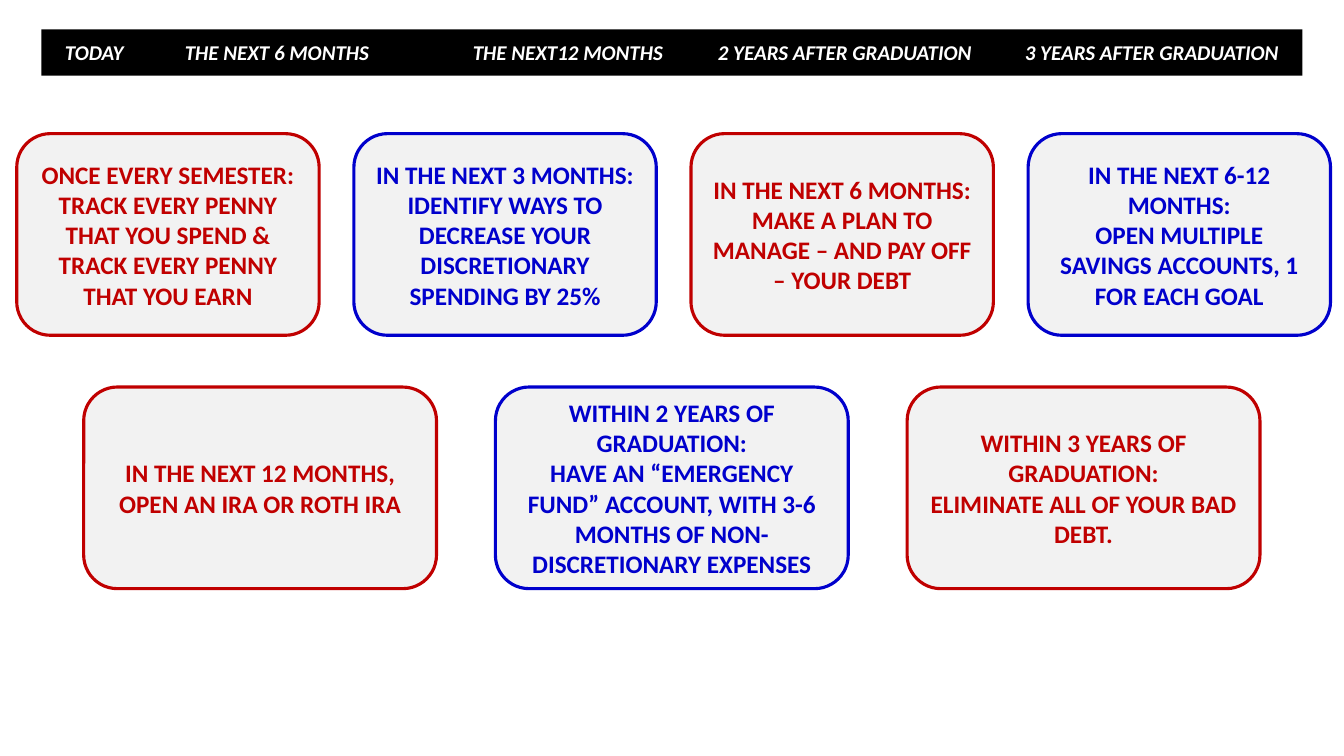
from lxml import etree
from pptx import Presentation
from pptx import util as u
from pptx.dml.color import RGBColor
from pptx.enum import shapes, text
from pptx.oxml import ns

Pt = u.Pt
FONT = "Calibri"
COLORS = {"black": "000000", "white": "FFFFFF", "card": "F2F2F2",
          "red": "C00000", "blue": "0000CC"}

# Label and its start, measured from the first label
PERIODS = [("TODAY", 0), ("THE NEXT 6 MONTHS", 85.7), ("THE NEXT12 MONTHS", 291.4),
           ("2 YEARS AFTER GRADUATION", 466.4), ("3 YEARS AFTER GRADUATION", 685.7)]

NEAR_GOALS = [
    ("red", ["ONCE EVERY SEMESTER:",
             "TRACK EVERY PENNY THAT YOU SPEND & TRACK EVERY PENNY THAT YOU EARN"]),
    ("blue", ["IN THE NEXT 3 MONTHS:",
              "IDENTIFY WAYS TO DECREASE YOUR DISCRETIONARY SPENDING BY 25%"]),
    ("red", ["IN THE NEXT 6 MONTHS:",
             "MAKE A PLAN TO MANAGE – AND PAY OFF – YOUR DEBT"]),
    ("blue", ["IN THE NEXT 6-12 MONTHS:",
              "OPEN MULTIPLE SAVINGS ACCOUNTS, 1 FOR EACH GOAL"]),
]
LATER_GOALS = [
    ("red", ["IN THE NEXT 12 MONTHS, OPEN AN IRA OR ROTH IRA"]),
    ("blue", ["WITHIN 2 YEARS OF GRADUATION:",
              "HAVE AN “EMERGENCY FUND” ACCOUNT, WITH 3-6 MONTHS OF "
              "NON-DISCRETIONARY EXPENSES"]),
    ("red", ["WITHIN 3 YEARS OF GRADUATION:", "ELIMINATE ALL OF YOUR BAD DEBT."]),
]


def color(name):
    return RGBColor.from_string(COLORS[name])


def add_block(page, kind, left, top, width, height, fill):
    box = page.shapes.add_shape(kind, Pt(left), Pt(top), Pt(width), Pt(height))
    box.shadow.inherit = False
    box.fill.solid()
    box.fill.fore_color.rgb = color(fill)
    box.text_frame.word_wrap = True
    box.text_frame.vertical_anchor = text.MSO_ANCHOR.MIDDLE
    return box


def add_span(para, words, size, ink, italic=False):
    span = para.add_run()
    span.text = words
    span.font.name = FONT
    span.font.size = Pt(size)
    span.font.bold = True
    span.font.italic = italic
    span.font.color.rgb = color(ink)


def add_timeline(page, left, top, width, height):
    """Black bar with the period labels set on tab stops."""
    bar = add_block(page, shapes.MSO_SHAPE.RECTANGLE, left, top, width, height, "black")
    bar.line.fill.background()
    bar.text_frame.margin_left = Pt(16.8)
    bar.text_frame.margin_right = 0
    para = bar.text_frame.paragraphs[0]
    para.alignment = text.PP_ALIGN.LEFT
    stops = etree.SubElement(para._p.get_or_add_pPr(), ns.qn("a:tabLst"))
    for label, start in PERIODS:
        if start:
            etree.SubElement(stops, ns.qn("a:tab"), pos=str(int(Pt(start))), algn="l")
            label = "\t" + label
        add_span(para, label, 15, "white", italic=True)


def add_goal(page, left, top, width, height, ink, lines):
    card = add_block(page, shapes.MSO_SHAPE.ROUNDED_RECTANGLE,
                     left, top, width, height, "card")
    card.line.color.rgb = color(ink)
    card.line.width = Pt(2.25)
    frame = card.text_frame
    for index, line in enumerate(lines):
        para = frame.add_paragraph() if index else frame.paragraphs[0]
        para.alignment = text.PP_ALIGN.CENTER
        add_span(para, line, 18, ink)


def add_goal_row(page, left, top, width, height, card_width, goals):
    """Spread the cards evenly from the left to the right edge of the row."""
    pitch = (width - card_width) / (len(goals) - 1)
    for index, (ink, lines) in enumerate(goals):
        add_goal(page, left + index * pitch, top, card_width, height, ink, lines)


def main():
    deck = Presentation()
    deck.slide_width, deck.slide_height = Pt(960), Pt(540)
    page = deck.slides.add_slide(deck.slide_layouts[6])
    add_timeline(page, 29.5, 21, 900.7, 33)
    add_goal_row(page, 12, 95.5, 938.4, 144, 216, NEAR_GOALS)
    add_goal_row(page, 59.8, 276.5, 840.2, 144, 252, LATER_GOALS)
    deck.save("out.pptx")


if __name__ == "__main__":
    main()
